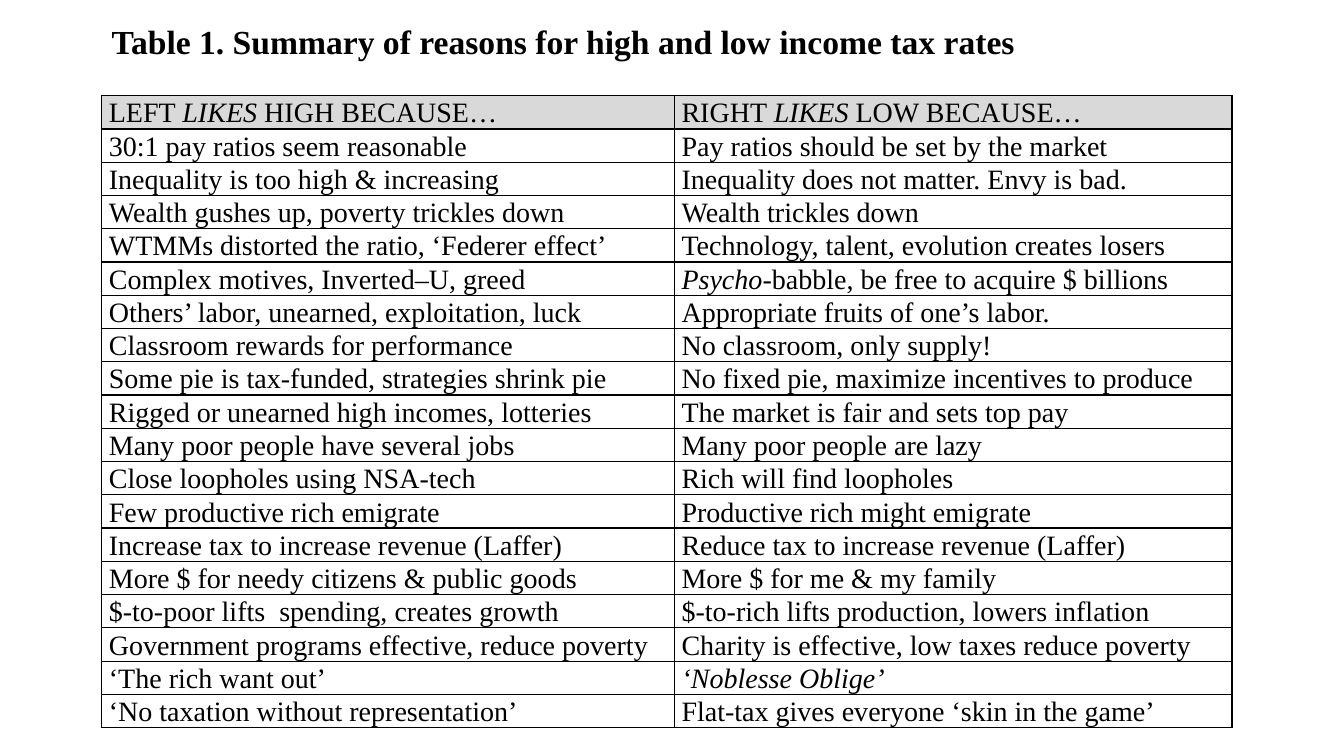
import pptx
import pptx.util
import pptx.dml.color
import pptx.enum.text
import pptx.oxml
from dataclasses import dataclass
from pptx.util import Inches


@dataclass(frozen=True)
class Theme:
    font: str = "Times New Roman"
    ink: str = "000000"
    header_fill: str = "D9D9D9"
    title_size: int = 24
    body_size: int = 20


theme = Theme()


def write_text(frame, text, size, bold=False, alignment=None, line_spacing=None):
    paragraph = frame.paragraphs[0]
    paragraph.alignment = alignment
    paragraph.line_spacing = line_spacing
    for index, part in enumerate(text.split("*")):
        if part:
            run = paragraph.add_run()
            run.text = part
            run.font.name = theme.font
            run.font.size = pptx.util.Pt(size)
            run.font.bold = bold
            run.font.italic = index % 2 == 1
            run.font.color.rgb = pptx.dml.color.RGBColor.from_string(theme.ink)


def add_borders(cell):
    properties = cell._tc.get_or_add_tcPr()
    for position, side in enumerate(("lnL", "lnR", "lnT", "lnB")):
        border = pptx.oxml.parse_xml(
            f'<a:{side} xmlns:a="http://schemas.openxmlformats.org/drawingml/2006/main" w="12700">'
            f'<a:solidFill><a:srgbClr val="{theme.ink}"/></a:solidFill></a:{side}>'
        )
        properties.insert(position, border)


reasons = [
    ("LEFT *LIKES* HIGH BECAUSE…", "RIGHT *LIKES* LOW BECAUSE…"),
    ("30:1 pay ratios seem reasonable", "Pay ratios should be set by the market"),
    ("Inequality is too high & increasing", "Inequality does not matter. Envy is bad."),
    ("Wealth gushes up, poverty trickles down", "Wealth trickles down"),
    ("WTMMs distorted the ratio, ‘Federer effect’", "Technology, talent, evolution creates losers"),
    ("Complex motives, Inverted–U, greed", "*Psycho*-babble, be free to acquire $ billions"),
    ("Others’ labor, unearned, exploitation, luck", "Appropriate fruits of one’s labor."),
    ("Classroom rewards for performance", "No classroom, only supply!"),
    ("Some pie is tax-funded, strategies shrink pie", "No fixed pie, maximize incentives to produce"),
    ("Rigged or unearned high incomes, lotteries", "The market is fair and sets top pay"),
    ("Many poor people have several jobs", "Many poor people are lazy"),
    ("Close loopholes using NSA-tech", "Rich will find loopholes"),
    ("Few productive rich emigrate", "Productive rich might emigrate"),
    ("Increase tax to increase revenue (Laffer)", "Reduce tax to increase revenue (Laffer)"),
    ("More $ for needy citizens & public goods", "More $ for me & my family"),
    ("$-to-poor lifts  spending, creates growth", "$-to-rich lifts production, lowers inflation"),
    ("Government programs effective, reduce poverty", "Charity is effective, low taxes reduce poverty"),
    ("‘The rich want out’", "*‘Noblesse Oblige’*"),
    ("‘No taxation without representation’", "Flat-tax gives everyone ‘skin in the game’"),
]

presentation = pptx.Presentation()
presentation.slide_width = Inches(13.33)
presentation.slide_height = Inches(7.5)
slide = presentation.slides.add_slide(presentation.slide_layouts[6])

table_shape = slide.shapes.add_table(
    len(reasons), 2, Inches(1.01), Inches(0.95), Inches(11.21), Inches(6.44)
)
table = table_shape.table
for column, width in zip(table.columns, (5.68, 5.53)):
    column.width = Inches(width)
for row, texts in zip(table.rows, reasons):
    row.height = Inches(0.28)
    for cell, text in zip(row.cells, texts):
        cell.margin_left = cell.margin_right = Inches(0.07)
        cell.margin_top = cell.margin_bottom = 0
        if texts == reasons[0]:
            cell.fill.solid()
            cell.fill.fore_color.rgb = pptx.dml.color.RGBColor.from_string(theme.header_fill)
        else:
            cell.fill.background()
        add_borders(cell)
        write_text(
            cell.text_frame, text, theme.body_size,
            alignment=pptx.enum.text.PP_ALIGN.JUSTIFY, line_spacing=1.07,
        )
table_shape.height = Inches(6.44)

title = slide.shapes.add_textbox(Inches(1.01), Inches(0.14), Inches(10), Inches(0.81))
title.text_frame.word_wrap = True
title.text_frame.margin_top = Inches(0.07)
write_text(
    title.text_frame, "Table 1. Summary of reasons for high and low income tax rates",
    theme.title_size, bold=True,
)

presentation.save("out.pptx")
